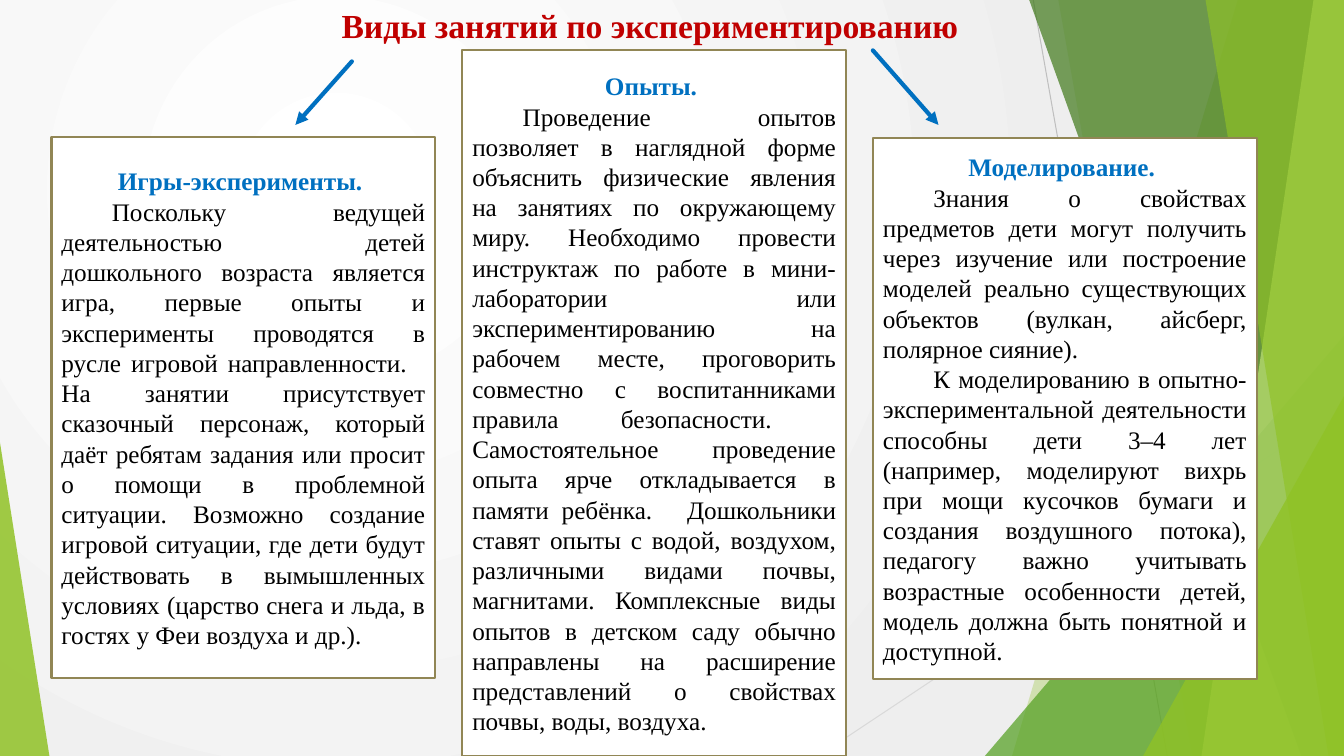
from lxml.etree import SubElement
from pptx import Presentation
from pptx.dml.color import RGBColor
from pptx.enum.shapes import MSO_CONNECTOR as Connector, MSO_SHAPE as Shape
from pptx.enum.text import MSO_ANCHOR as Anchor, MSO_AUTO_SIZE as AutoSize, PP_ALIGN as Align
from pptx.oxml.ns import qn
from pptx.util import Inches, Pt

FONT = "Times New Roman"
COLORS = {name: RGBColor.from_string(value) for name, value in {
    "white": "FFFFFF", "mist": "EEEEEE", "gray": "BFBFBF", "pale gray": "D9D9D9",
    "green": "90C226", "leaf": "54A021", "forest": "3F7819", "lime": "C0E474",
    "red": "C00000", "blue": "0070C0", "olive": "918655", "black": "000000",
}.items()}

deck = Presentation()
deck.slide_width, deck.slide_height = Inches(13.333), Inches(7.5)
slide = deck.slides.add_slide(deck.slide_layouts[6])
shapes = slide.shapes


def place(*percents):
    """Turn alternating x, y percentages of the slide into lengths."""
    sides = (deck.slide_width, deck.slide_height)
    return [round(sides[i % 2] * share / 100) for i, share in enumerate(percents)]


def draw_line(ends, color, width):
    line = shapes.add_connector(Connector.STRAIGHT, *place(*ends))
    line.line.color.rgb = COLORS[color]
    line.line.width = Pt(width)
    SubElement(line.element.spPr, qn("a:effectLst"))
    return line


# Background: radial gradient
background = slide.background.fill
background.gradient()
for stop, position, color in zip(background.gradient_stops, (0, 1), ("white", "mist")):
    stop.position = position
    stop.color.rgb = COLORS[color]
linear = slide.element.find(".//" + qn("a:lin"))
gradient = linear.getparent()
gradient.remove(linear)
radial = SubElement(gradient, qn("a:path"), {"path": "circle"})
SubElement(radial, qn("a:fillToRect"),
           {"l": "50000", "t": "50000", "r": "100000", "b": "100000"})

# Green facets along the edges
draw_line((76.88, 0, 86.85, 100), "gray", 0.75)
draw_line((100, 53.73, 60.9, 100), "pale gray", 0.75)

# Pane: x at the top and at the bottom; triangle: left, top, width, apex
facets = [
    ("pane", (92.1, 75.3), "green", 30),
    ("pane", (78.75, 88.73), "green", 20),
    ("triangle", (73.28, 44.4, 26.72, 1), "leaf", 72),
    ("pane", (76.58, 96.83), "forest", 70),
    ("pane", (97.73, 89.4), "lime", 70),
    ("pane", (89.7, 98.85), "green", 65),
    ("triangle", (85.05, 52.4, 14.95, 1), "green", 80),
    ("triangle", (0, 58.53, 3.68, 0), "green", 85),
]
for kind, geometry, color, opacity in facets:
    if kind == "pane":
        top_x, bottom_x = geometry
        outline = shapes.build_freeform(*place(top_x, 0))
        outline.add_line_segments(
            [place(100, 0), place(100, 100), place(bottom_x, 100)], close=True)
        facet = outline.convert_to_shape()
    else:
        left, top, width, apex = geometry
        facet = shapes.add_shape(Shape.ISOSCELES_TRIANGLE,
                                 *place(left, top, width, 100 - top))
        facet.adjustments[0] = apex
    facet.shadow.inherit = False
    facet.fill.solid()
    facet.fill.fore_color.rgb = COLORS[color]
    facet.line.fill.background()
    tint = facet.element.spPr.find(qn("a:solidFill")).find(qn("a:srgbClr"))
    SubElement(tint, qn("a:alpha"), {"val": str(opacity * 1000)})

# Title
title = shapes.add_textbox(*place(24.68, 0, 47.9, 6.67))
title.text_frame.word_wrap = False
title.text_frame.auto_size = AutoSize.SHAPE_TO_FIT_TEXT
title.text_frame.text = "Виды занятий по экспериментированию"
font = title.text_frame.paragraphs[0].runs[0].font
font.name, font.size, font.bold = FONT, Pt(24), True
font.color.rgb = COLORS["red"]

# Three kinds of lessons
lessons = [
    ((3.83, 18.13, 28.55, 71.6), [
        "Игры-эксперименты. ",
        "\tПоскольку ведущей деятельностью детей дошкольного возраста является игра, "
        "первые опыты и эксперименты проводятся в русле игровой направленности. "
        "\tНа занятии присутствует сказочный персонаж, который даёт ребятам задания "
        "или просит о помощи в проблемной ситуации. Возможно создание игровой "
        "ситуации, где дети будут действовать в вымышленных условиях (царство снега "
        "и льда, в гостях у Феи воздуха и др.).",
    ]),
    ((64.95, 18.27, 28.55, 71.6), [
        "Моделирование. ",
        "\tЗнания о свойствах предметов дети могут получить через изучение или "
        "построение моделей реально существующих объектов (вулкан, айсберг, "
        "полярное сияние). ",
        "\tК моделированию в опытно-экспериментальной деятельности способны дети "
        "3–4 лет (например, моделируют вихрь при мощи кусочков бумаги и создания "
        "воздушного потока), педагогу важно учитывать возрастные особенности детей, "
        "модель должна быть понятной и доступной.",
    ]),
    ((34.4, 6.67, 28.55, 93.33), [
        "Опыты. ",
        "\tПроведение опытов позволяет в наглядной форме объяснить физические явления "
        "на занятиях по окружающему миру. Необходимо провести инструктаж по работе в "
        "мини-лаборатории или экспериментированию на рабочем месте, проговорить "
        "совместно с воспитанниками правила безопасности. \tСамостоятельное "
        "проведение опыта ярче откладывается в памяти ребёнка. \tДошкольники ставят "
        "опыты с водой, воздухом, различными видами почвы, магнитами. Комплексные "
        "виды опытов в детском саду обычно направлены на расширение представлений о "
        "свойствах почвы, воды, воздуха.",
    ]),
]
for bounds, texts in lessons:
    box = shapes.add_shape(Shape.RECTANGLE, *place(*bounds))
    box.shadow.inherit = False
    box.fill.solid()
    box.fill.fore_color.rgb = COLORS["white"]
    box.line.color.rgb = COLORS["olive"]
    box.line.width = Pt(1.5)
    frame = box.text_frame
    frame.word_wrap = True
    frame.vertical_anchor = Anchor.MIDDLE
    frame.text = "\n".join(texts)
    for index, para in enumerate(frame.paragraphs):
        heading = index == 0
        para.alignment = Align.CENTER if heading else Align.JUSTIFY
        font = para.runs[0].font
        font.name, font.size, font.bold = FONT, Pt(18), heading
        font.color.rgb = COLORS["blue" if heading else "black"]

# Arrows from the title to the side boxes
for ends in [(26.18, 8.13, 21.98, 16.53), (64.95, 6.67, 69.83, 16.53)]:
    arrow = draw_line(ends, "blue", 3)
    stroke = arrow.element.spPr.find(qn("a:ln"))
    stroke.set("cap", "rnd")
    SubElement(stroke, qn("a:tailEnd"), {"type": "triangle"})

deck.save("out.pptx")
